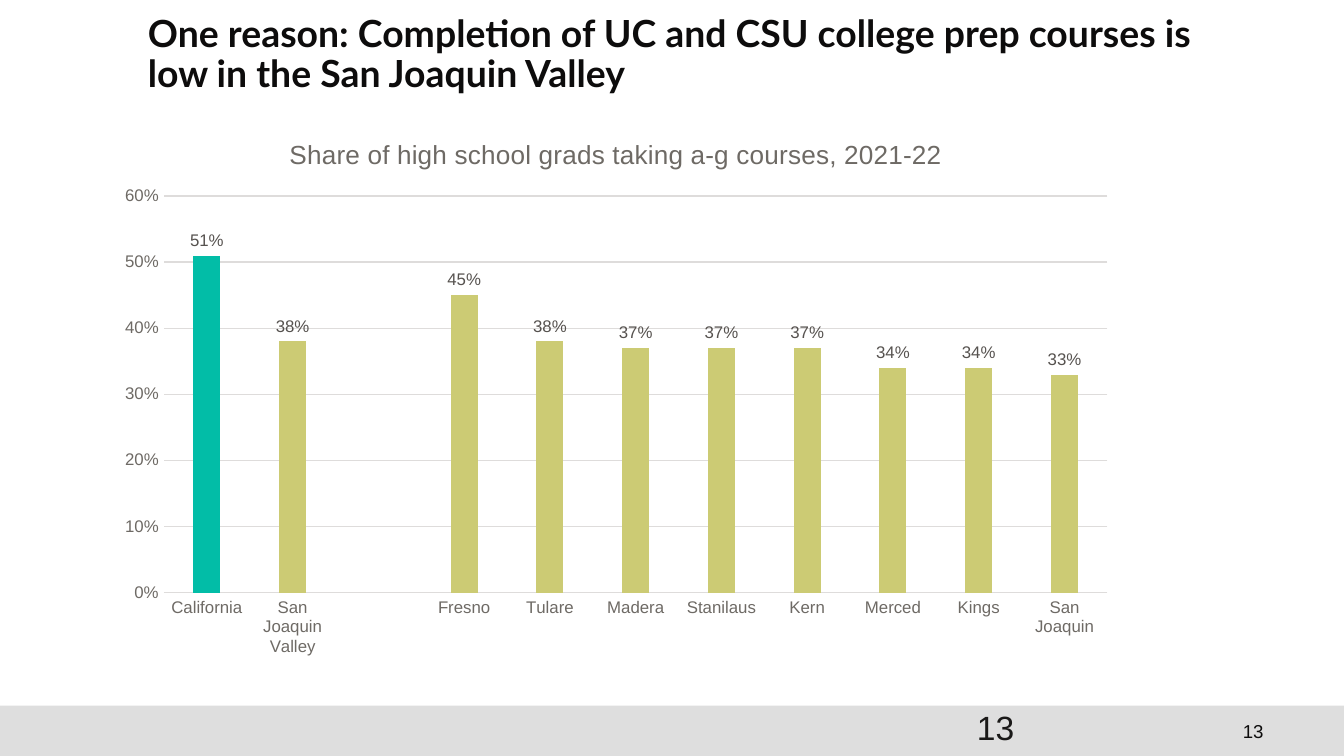
"""Build the slide on college prep course completion in the San Joaquin Valley."""
from dataclasses import dataclass

from lxml import etree
from pptx import Presentation
from pptx import util as u
from pptx.chart.data import CategoryChartData
from pptx.dml.color import RGBColor
from pptx.enum import chart as ch
from pptx.enum import shapes, text
from pptx.oxml.ns import qn

COLORS = {
    "ink": "0D0C0C", "dark": "1A1918", "label": "56524F", "axis": "6E6A65",
    "grid": "DEDCDB", "footer": "DEDEDE", "county": "CCCB74", "state": "02BDA7",
}
SHARES = {
    "California": 0.51, "San Joaquin Valley": 0.38, "": None, "Fresno": 0.45,
    "Tulare": 0.38, "Madera": 0.37, "Stanilaus": 0.37, "Kern": 0.37,
    "Merced": 0.34, "Kings": 0.34, "San Joaquin": 0.33,
}
CHART_LEFT, CHART_TOP, CHART_WIDTH, CHART_HEIGHT = 0.78, 0.85, 7.61, 4.12
PLOT_LEFT, PLOT_TOP, PLOT_WIDTH, PLOT_HEIGHT = 1.22, 1.46, 7.02, 2.95


@dataclass
class PageNumber:
    top: float
    height: float
    size: int
    color: str
    align: text.PP_ALIGN
    anchor: text.MSO_ANCHOR


PAGE_NUMBERS = [
    PageNumber(5.25, 0.38, 10, "ink", text.PP_ALIGN.RIGHT, text.MSO_ANCHOR.MIDDLE),
    PageNumber(5.21, 0.3, 18, "dark", text.PP_ALIGN.LEFT, text.MSO_ANCHOR.TOP),
]


def rgb(name: str) -> RGBColor:
    return RGBColor.from_string(COLORS[name])


def style(font, size: float, color: str, name: str = "Arial", bold: bool = False) -> None:
    font.name, font.size, font.bold = name, u.Pt(size), bold
    font.color.rgb = rgb(color)


def add_footer(s) -> None:
    sp = s.shapes.add_shape(shapes.MSO_SHAPE.RECTANGLE, 0, u.Inches(5.25),
                            u.Inches(10), u.Inches(0.38))
    sp.shadow.inherit = False
    sp.fill.solid()
    sp.fill.fore_color.rgb = rgb("footer")
    sp.line.fill.background()


def add_page_number(s, number: PageNumber) -> None:
    sp = s.shapes.add_textbox(u.Inches(7.17), u.Inches(number.top),
                              u.Inches(2.33), u.Inches(number.height))
    tf = sp.text_frame
    tf.word_wrap = True
    tf.vertical_anchor = number.anchor
    p = tf.paragraphs[0]
    p.alignment = number.align
    r = p.add_run()
    r.text = "13"
    style(r.font, number.size, number.color)


def set_title(s) -> None:
    sp = s.shapes.title
    sp.left, sp.top = u.Inches(1.1), u.Inches(0.11)
    sp.width, sp.height = u.Inches(8.12), u.Inches(0.8)
    tf = sp.text_frame
    tf.margin_left = tf.margin_right = tf.margin_top = tf.margin_bottom = 0
    tf.word_wrap = True
    tf.auto_size = text.MSO_AUTO_SIZE.NONE
    tf.vertical_anchor = text.MSO_ANCHOR.TOP
    p = tf.paragraphs[0]
    p.alignment = text.PP_ALIGN.LEFT
    p.line_spacing = 0.9
    r = p.add_run()
    r.text = ("One reason: Completion of UC and CSU college prep courses is "
              "low in the San Joaquin Valley")
    style(r.font, 20, "ink", "Lato", True)


def set_plot_layout(chart) -> None:
    area = chart.element.find(".//" + qn("c:plotArea"))
    for old in area.findall(qn("c:layout")):
        area.remove(old)
    layout = etree.Element(qn("c:layout"))
    area.insert(0, layout)
    manual = etree.SubElement(layout, qn("c:manualLayout"))
    settings = {
        "layoutTarget": "inner", "xMode": "edge", "yMode": "edge",
        "x": (PLOT_LEFT - CHART_LEFT) / CHART_WIDTH,
        "y": (PLOT_TOP - CHART_TOP) / CHART_HEIGHT,
        "w": PLOT_WIDTH / CHART_WIDTH, "h": PLOT_HEIGHT / CHART_HEIGHT,
    }
    for tag, val in settings.items():
        etree.SubElement(manual, qn("c:" + tag), val=str(val))


def style_axes(chart) -> None:
    for axis in (chart.category_axis, chart.value_axis):
        axis.major_tick_mark = axis.minor_tick_mark = ch.XL_TICK_MARK.NONE
        style(axis.tick_labels.font, 9, "axis")
    val = chart.value_axis
    val.minimum_scale, val.maximum_scale, val.major_unit = 0, 0.6, 0.1
    val.tick_labels.number_format = "0%"
    val.tick_labels.number_format_is_linked = False
    val.format.line.fill.background()
    for line in (chart.category_axis.format.line, val.major_gridlines.format.line):
        line.color.rgb = rgb("grid")
        line.width = u.Pt(0.75)


def add_share_chart(s) -> None:
    data = CategoryChartData(number_format="0%")
    data.categories = list(SHARES)
    data.add_series("Series 1", list(SHARES.values()))
    chart = s.shapes.add_chart(ch.XL_CHART_TYPE.COLUMN_CLUSTERED, u.Inches(CHART_LEFT),
                               u.Inches(CHART_TOP), u.Inches(CHART_WIDTH),
                               u.Inches(CHART_HEIGHT), data).chart
    style(chart.font, 10, "dark")
    chart.has_legend = False
    chart.has_title = True
    r = chart.chart_title.text_frame.paragraphs[0].add_run()
    r.text = "Share of high school grads taking a-g courses, 2021-22"
    style(r.font, 14, "axis")
    chart.chart_title.include_in_layout = False
    style_axes(chart)
    set_plot_layout(chart)

    plot = chart.plots[0]
    plot.gap_width, plot.overlap = 219, -27
    plot.vary_by_categories = False
    series = plot.series[0]
    for fmt, color in ((series.format, "county"), (series.points[0].format, "state")):
        fmt.fill.solid()
        fmt.fill.fore_color.rgb = rgb(color)
    labels = series.data_labels
    labels.show_value = True
    labels.number_format = "0%"
    labels.number_format_is_linked = False
    labels.position = ch.XL_LABEL_POSITION.OUTSIDE_END
    style(labels.font, 9, "label")


def main() -> None:
    prs = Presentation()
    prs.slide_width = u.Inches(10)
    prs.slide_height = u.Inches(10 * 9 / 16)
    s = prs.slides.add_slide(prs.slide_layouts[5])
    add_footer(s)
    set_title(s)
    for number in PAGE_NUMBERS:
        add_page_number(s, number)
    add_share_chart(s)
    prs.save("out.pptx")


if __name__ == "__main__":
    main()
